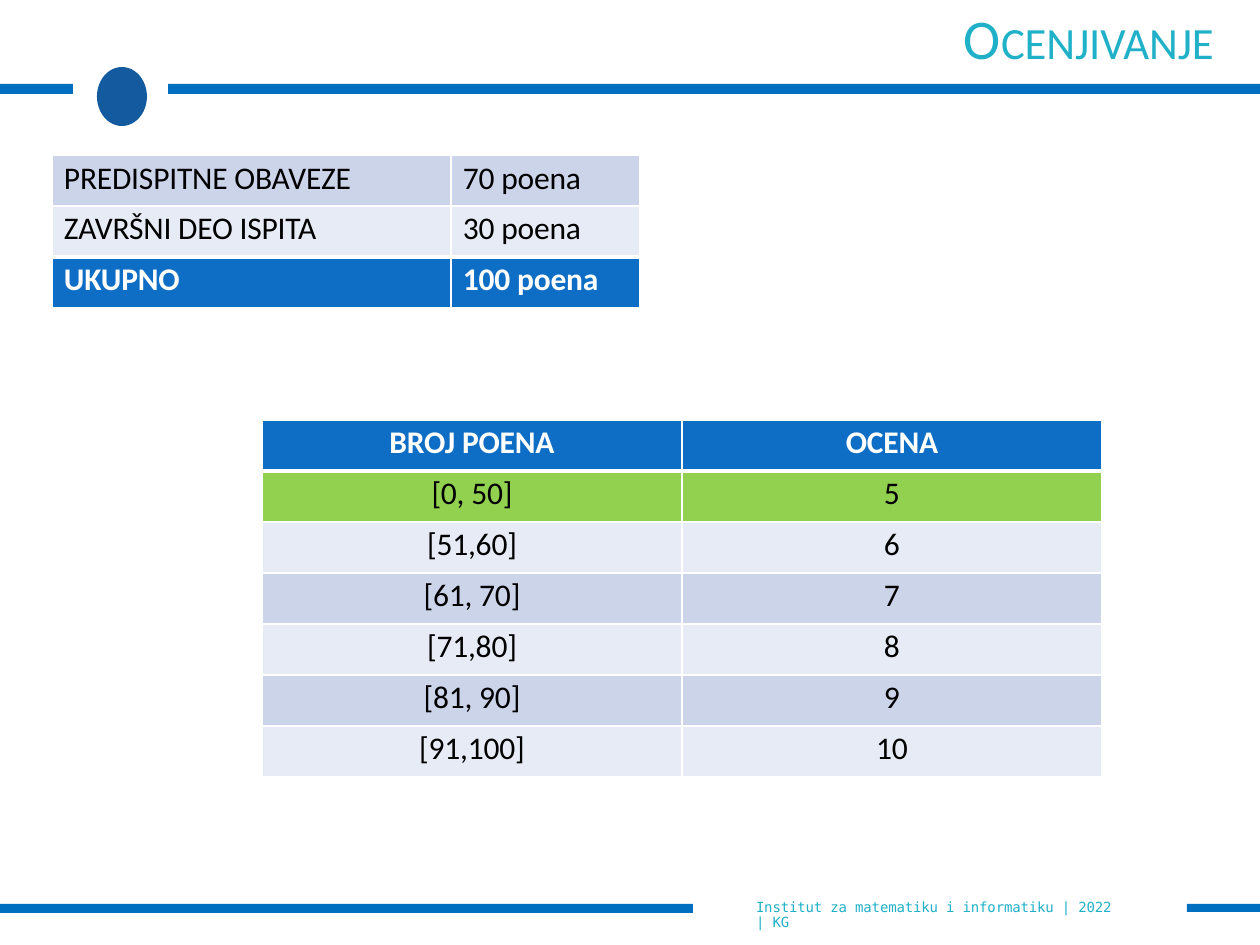
import dataclasses

import lxml.etree
import pptx
import pptx.dml.color
import pptx.enum.shapes
import pptx.enum.text
import pptx.oxml.ns
import pptx.util

SCALE = 914400 / 126
ALIGN = pptx.enum.text.PP_ALIGN


@dataclasses.dataclass(frozen=True)
class Theme:
    """Colours, fonts and type sizes of the slide."""
    bar: str = "006FC0"
    emblem: str = "135A9F"
    accent: str = "20B1C8"
    strong: str = "0E6EC5"
    dark_band: str = "CCD4EA"
    light_band: str = "E7EBF5"
    highlight: str = "92D050"
    white: str = "FFFFFF"
    black: str = "000000"
    body_font: str = "Calibri"
    mono_font: str = "DejaVu Sans Mono"
    title_size: float = 32
    small_caps_size: float = 25.5
    table_size: float = 18
    footer_size: float = 8
    tracking: int = -10


THEME = Theme()


def px(length):
    """Turn px into EMU."""
    return pptx.util.Emu(round(length * SCALE))


def rgb(value):
    """Turn a hex string into a colour."""
    return pptx.dml.color.RGBColor.from_string(value)


def assign(target, values):
    """Set attributes of an object from a dict."""
    for name, value in values.items():
        setattr(target, name, value)


def add_span(para, text, size, color, font, bold=False):
    """Add one formatted run to a paragraph."""
    span = para.add_run()
    span.text = text
    assign(span.font, {"size": pptx.util.Pt(size), "name": font, "bold": bold})
    span.font.color.rgb = rgb(color)
    span.font._element.set("spc", str(THEME.tracking))


def add_block(page, kind, box, color):
    """Add a plain filled shape without outline."""
    block = page.shapes.add_shape(kind, *map(px, box))
    block.shadow.inherit = False
    block.fill.solid()
    block.fill.fore_color.rgb = rgb(color)
    block.line.fill.background()


def add_text_box(page, box, top_inset=0):
    """Add a wrapping text box and return its first paragraph."""
    frame = page.shapes.add_textbox(*map(px, box)).text_frame
    assign(frame, {
        "word_wrap": True, "margin_left": px(1), "margin_right": 0,
        "margin_top": px(top_inset), "margin_bottom": 0,
    })
    return frame.paragraphs[0]


def add_header(page, box):
    """Place the title, the emblem and the split bar under the title."""
    left, top, width, height = box
    shapes = pptx.enum.shapes.MSO_SHAPE
    add_block(page, shapes.OVAL, (left + 97, top + 67, 50, 59), THEME.emblem)
    add_block(page, shapes.RECTANGLE, (left, top + 84, 73, 10), THEME.bar)
    add_block(page, shapes.RECTANGLE, (left + 168, top + 84, width - 168, 10), THEME.bar)
    para = add_text_box(page, (left + 963, top + 1, 256, 71), 3)
    add_span(para, "O", THEME.title_size, THEME.accent, THEME.body_font)
    add_span(para, "CENJIVANJE", THEME.small_caps_size, THEME.accent, THEME.body_font)


def add_footer(page, box):
    """Place the footer line between its two bars."""
    left, top, width, height = box
    rectangle = pptx.enum.shapes.MSO_SHAPE.RECTANGLE
    add_block(page, rectangle, (left, top + 4, 693, 9), THEME.bar)
    add_block(page, rectangle, (left + width - 73, top + 4, 73, 8), THEME.bar)
    para = add_text_box(page, (left + 755, top, 372, 18))
    para.line_spacing = pptx.util.Pt(8.6)
    add_span(para, "Institut za matematiku i informatiku | 2022 | KG",
             THEME.footer_size, THEME.accent, THEME.mono_font)


def add_borders(cell, widths):
    """Draw white cell borders from a dict of side and width in points."""
    properties = cell._tc.get_or_add_tcPr()
    for index, (side, width) in enumerate(widths.items()):
        line = lxml.etree.Element(pptx.oxml.ns.qn(f"a:ln{side}"), w=str(pptx.util.Pt(width)))
        fill = lxml.etree.SubElement(line, pptx.oxml.ns.qn("a:solidFill"))
        lxml.etree.SubElement(fill, pptx.oxml.ns.qn("a:srgbClr"), val=THEME.white)
        properties.insert(index, line)


def add_grid(page, box, columns, rows, heavy, align, indent):
    """Fill a box with a table whose heavy rule lies above the given row."""
    grid = page.shapes.add_table(len(rows), len(columns), *map(px, box)).table
    assign(grid, {"first_row": False, "horz_banding": False})
    for column, width in zip(grid.columns, columns):
        column.width = px(width)
    for index, (fill, texts) in enumerate(rows):
        grid.rows[index].height = px(box[3] / len(rows))
        strong = fill == THEME.strong
        for cell, text in zip(grid.rows[index].cells, texts):
            assign(cell, {
                "margin_left": px(indent), "margin_right": 0,
                "margin_top": px(4), "margin_bottom": 0,
            })
            cell.fill.solid()
            cell.fill.fore_color.rgb = rgb(fill)
            add_borders(cell, {
                "L": 1, "R": 1,
                "T": 3 if index == heavy else 1,
                "B": 3 if index + 1 == heavy else 1,
            })
            para = cell.text_frame.paragraphs[0]
            para.alignment = align
            add_span(para, text, THEME.table_size,
                     THEME.white if strong else THEME.black, THEME.body_font, strong)


def add_points_table(page, box):
    """Place the table of points for each part of the exam."""
    rows = [
        (THEME.dark_band, ("PREDISPITNE OBAVEZE", "70 poena")),
        (THEME.light_band, ("ZAVRŠNI DEO ISPITA", "30 poena")),
        (THEME.strong, ("UKUPNO", "100 poena")),
    ]
    add_grid(page, box, (399, box[2] - 399), rows, 2, ALIGN.LEFT, 12)


def add_grades_table(page, box):
    """Place the table that turns points into grades."""
    ranges = ("[51,60]", "[61, 70]", "[71,80]", "[81, 90]", "[91,100]")
    bands = (THEME.light_band, THEME.dark_band)
    rows = [
        (THEME.strong, ("BROJ POENA", "OCENA")),
        (THEME.highlight, ("[0, 50]", "5")),
    ]
    rows += [(bands[index % 2], (points, str(index + 6)))
             for index, points in enumerate(ranges)]
    add_grid(page, box, (box[2] / 2, box[2] / 2), rows, 1, ALIGN.CENTER, 0)


def main():
    """Build the slide and save it."""
    deck = pptx.Presentation()
    assign(deck, {"slide_width": px(1260), "slide_height": px(945)})
    page = deck.slides.add_slide(deck.slide_layouts[6])
    add_header(page, (0, 0, 1260, 126))
    add_footer(page, (0, 900, 1260, 45))
    add_points_table(page, (52, 155, 588, 153))
    add_grades_table(page, (262, 420, 840, 357))
    deck.save("out.pptx")


if __name__ == "__main__":
    main()
